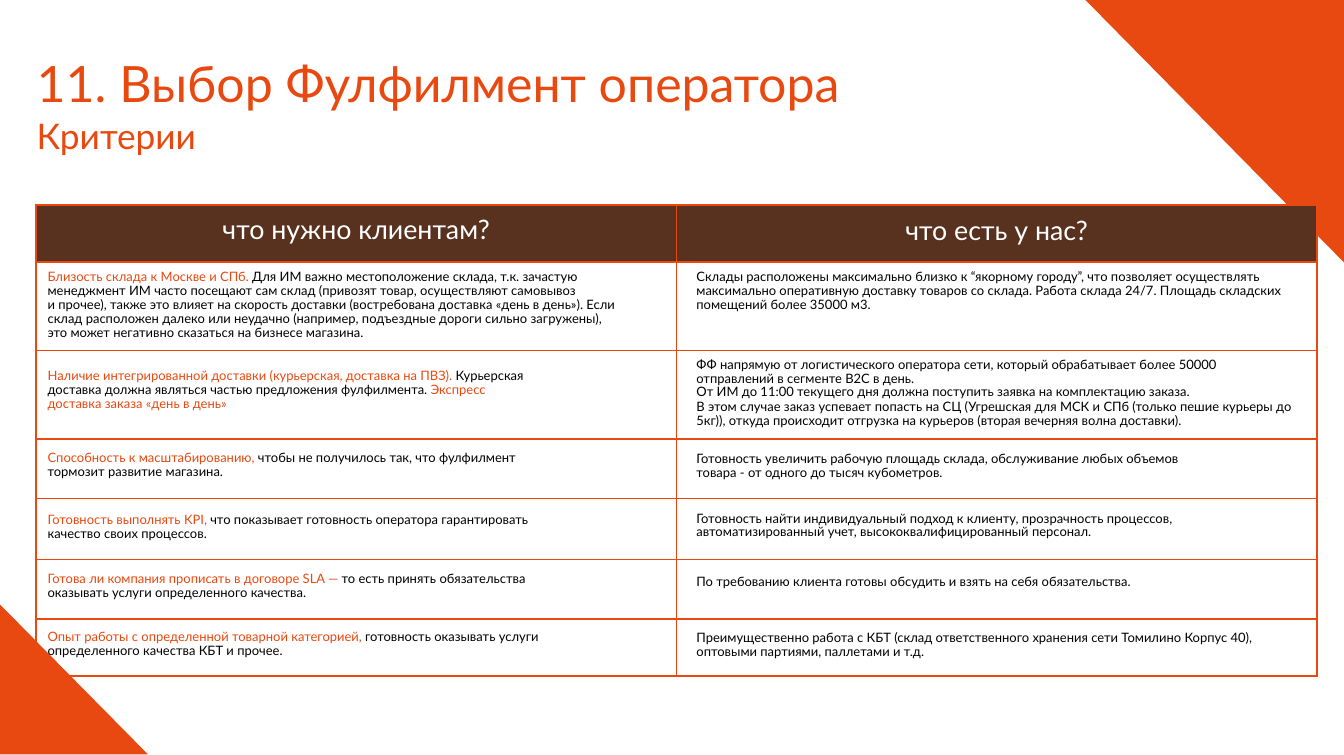
from dataclasses import dataclass

from lxml import etree
from pptx import Presentation
from pptx.dml.color import RGBColor
from pptx.enum.shapes import MSO_SHAPE
from pptx.enum.text import PP_ALIGN
from pptx.oxml.ns import qn
from pptx.util import Emu, Pt

PX = 9144  # one px is a hundredth of an inch
ORANGE = RGBColor(0xE8, 0x49, 0x10)
BROWN = RGBColor(0x58, 0x31, 0x1F)
BLACK = RGBColor(0, 0, 0)
WHITE = RGBColor(0xFF, 0xFF, 0xFF)
FONT = "Lato"
CENTER = PP_ALIGN.CENTER
CORNER_TRIANGLE = MSO_SHAPE.RIGHT_TRIANGLE

COLUMN_WIDTH = 996
ROW_HEIGHTS = (88, 138, 138, 92, 95, 93, 88)
NEED_INDENT, OFFER_INDENT = 18, 31


@dataclass(frozen=True)
class Run:
    text: str
    color: RGBColor = BLACK


@dataclass(frozen=True)
class Line:
    runs: tuple[Run, ...]
    right: int = 26
    before: float = 0
    spacing: float = 15.6


@dataclass(frozen=True)
class Entry:
    top: int
    lines: tuple[Line, ...]


@dataclass(frozen=True)
class Corner:
    left: int
    top: int
    width: int
    height: int
    rotation: int


def need(top: int, accent: str, rest: str, right: int = 190) -> Entry:
    return Entry(top, (Line((Run(accent, ORANGE), Run(rest)), right),))


def offer(top: int, text: str, right: int = 26) -> Entry:
    return Entry(top, (Line((Run(text),), right),))


CORNERS = (Corner(1688, 0, 403, 409, 180), Corner(0, 940, 230, 233, 0))
HEADINGS = (("что нужно клиентам?", 12), ("что есть у нас?", 14))

CRITERIA: tuple[tuple[Entry, Entry], ...] = (
    (
        Entry(14, (
            Line((
                Run("Близость склада к Москве и СПб. ", ORANGE),
                Run("Для ИМ важно местоположение склада, т.к. зачастую менеджмент ИМ часто "
                    "посещают сам склад (привозят товар, осуществляют самовывоз"),
            ), 87),
            Line((
                Run("и прочее), также это влияет на скорость доставки (востребована доставка "
                    "«день в день»). Если склад расположен далеко или неудачно (например, "
                    "подъездные дороги сильно загружены), это может негативно сказаться "
                    "на бизнесе магазина."),
            ), 87, 0.1),
        )),
        offer(14, "Склады расположены максимально близко к “якорному городу”, что позволяет "
                  "осуществлять максимально оперативную доставку товаров со склада. Работа "
                  "склада 24/7. Площадь складских помещений более 35000 м3."),
    ),
    (
        Entry(30, (
            Line((
                Run("Наличие интегрированной доставки (курьерская, доставка на ПВЗ). ", ORANGE),
                Run("Курьерская доставка должна являться частью предложения фулфилмента. "),
                Run("Экспресс доставка заказа «день в день»", ORANGE),
            ), 222),
        )),
        Entry(13, (
            Line((
                Run("ФФ напрямую от логистического оператора сети, который обрабатывает более "
                    "50000 отправлений в сегменте В2С в день."),
            ), 96),
            Line((
                Run("От ИМ до 11:00 текущего дня должна поступить заявка на комплектацию "
                    "заказа."),
            ), spacing=14.5),
            Line((
                Run("В этом случае заказ успевает попасть на СЦ (Угрешская для МСК и СПб "
                    "(только пешие курьеры до 5кг)), откуда происходит отгрузка на курьеров "
                    "(вторая вечерняя волна доставки)."),
            ), 19, 1.1),
        )),
    ),
    (
        need(19, "Способность к масштабированию, ",
             "чтобы не получилось так, что фулфилмент тормозит развитие магазина."),
        offer(20, "Готовность увеличить рабочую площадь склада, обслуживание любых объемов "
                  "товара - от одного до тысяч кубометров.", 182),
    ),
    (
        need(23, "Готовность выполнять KPI, ",
             "что показывает готовность оператора гарантировать качество своих процессов."),
        offer(21, "Готовность найти индивидуальный подход к клиенту, прозрачность процессов, "
                  "автоматизированный учет, высококвалифицированный персонал.", 159),
    ),
    (
        need(20, "Готова ли компания прописать в договоре SLA — ",
             "то есть принять обязательства оказывать услуги определенного качества."),
        offer(24, "По требованию клиента готовы обсудить и взять на себя обязательства."),
    ),
    (
        need(18, "Опыт работы с определенной товарной категорией, ",
             "готовность оказывать услуги определенного качества КБТ и прочее."),
        offer(19, "Преимущественно работа с КБТ (склад ответственного хранения сети Томилино "
                  "Корпус 40), оптовыми партиями, паллетами и т.д.", 58),
    ),
)


def px(length: int) -> Emu:
    return Emu(length * PX)


def add_run(paragraph, text: str, size: float, color: RGBColor) -> None:
    run = paragraph.add_run()
    run.text = text
    run.font.name = FONT
    run.font.size = Pt(size)
    run.font.color.rgb = color


def set_insets(holder, top: int) -> None:
    holder.margin_left = holder.margin_right = holder.margin_bottom = 0
    holder.margin_top = px(top)


def add_corner(slide, corner: Corner) -> None:
    triangle = slide.shapes.add_shape(
        CORNER_TRIANGLE, px(corner.left), px(corner.top), px(corner.width), px(corner.height))
    triangle.rotation = corner.rotation
    triangle.shadow.inherit = False
    triangle.fill.solid()
    triangle.fill.fore_color.rgb = ORANGE
    triangle.line.fill.background()


def prepare_cell(cell, top: int) -> None:
    set_insets(cell, top)
    properties = cell._tc.get_or_add_tcPr()
    for side in ("a:lnL", "a:lnR", "a:lnT", "a:lnB"):
        border = etree.SubElement(properties, qn(side), w=str(Pt(2.25)))
        fill = etree.SubElement(border, qn("a:solidFill"))
        etree.SubElement(fill, qn("a:srgbClr"), val=str(ORANGE))
    cell.fill.background()


def fill_entry(cell, entry: Entry, indent: int) -> None:
    prepare_cell(cell, entry.top)
    frame = cell.text_frame
    for index, line in enumerate(entry.lines):
        paragraph = frame.add_paragraph() if index else frame.paragraphs[0]
        properties = paragraph._p.get_or_add_pPr()
        properties.set("marL", str(px(indent)))
        properties.set("marR", str(px(line.right)))
        paragraph.line_spacing = Pt(line.spacing)
        paragraph.space_before = Pt(line.before)
        for run in line.runs:
            add_run(paragraph, run.text, 14.5, run.color)


def main() -> None:
    deck = Presentation()
    deck.slide_width, deck.slide_height = px(2090), px(1174)
    slide = deck.slides.add_slide(deck.slide_layouts[6])

    # Corner decoration
    for corner in CORNERS:
        add_corner(slide, corner)

    # Criteria table
    table = slide.shapes.add_table(
        len(ROW_HEIGHTS), 2, px(56), px(319), px(2 * COLUMN_WIDTH), px(sum(ROW_HEIGHTS))).table
    table.first_row = table.horz_banding = False
    for column in table.columns:
        column.width = px(COLUMN_WIDTH)
    for row, height in zip(table.rows, ROW_HEIGHTS):
        row.height = px(height)
    for column, (heading, top) in enumerate(HEADINGS):
        cell = table.cell(0, column)
        prepare_cell(cell, top)
        cell.fill.solid()
        cell.fill.fore_color.rgb = BROWN
        paragraph = cell.text_frame.paragraphs[0]
        paragraph.alignment = CENTER
        add_run(paragraph, heading, 30, WHITE)
    for row, (client_need, our_offer) in enumerate(CRITERIA, start=1):
        fill_entry(table.cell(row, 0), client_need, NEED_INDENT)
        fill_entry(table.cell(row, 1), our_offer, OFFER_INDENT)

    # Title and subtitle
    title = slide.shapes.add_textbox(px(57), px(74), px(1496), px(172)).text_frame
    title.word_wrap = True
    set_insets(title, 7)
    add_run(title.paragraphs[0], "11. Выбор Фулфилмент оператора", 56, ORANGE)
    subtitle = title.add_paragraph()
    subtitle.space_before = Pt(2.9)
    add_run(subtitle, "Критерии", 39.5, ORANGE)

    deck.save("out.pptx")


if __name__ == "__main__":
    main()
